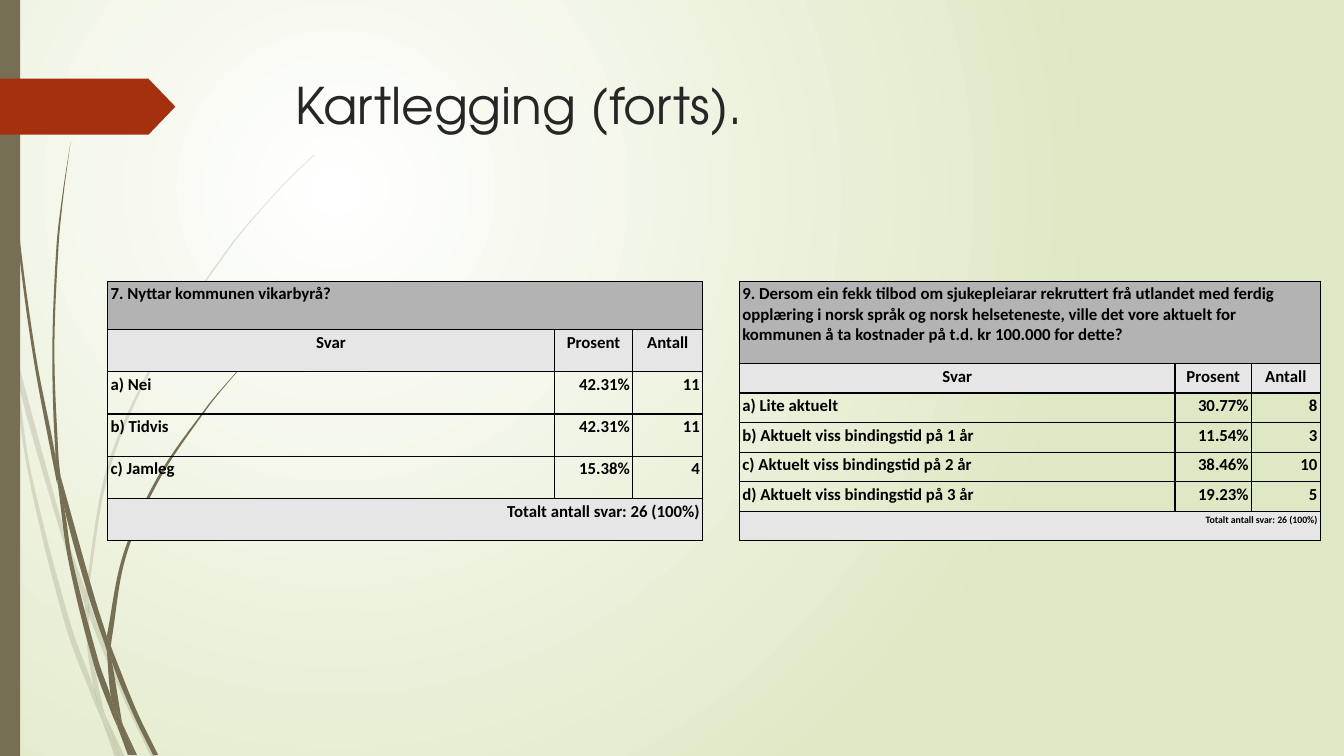
import math
from dataclasses import dataclass

from lxml import etree
from pptx import Presentation
from pptx import util as u
from pptx.dml.color import RGBColor
from pptx.enum import shapes, text
from pptx.oxml import ns

Pt = u.Pt
Point = tuple[float, float]
LEFT, CENTER, RIGHT = text.PP_ALIGN.LEFT, text.PP_ALIGN.CENTER, text.PP_ALIGN.RIGHT


@dataclass(frozen=True)
class Theme:
    olive: str = "766F54"
    rust: str = "A53010"
    glow: str = "FFFFFF"
    meadow: str = "DFE8C4"
    question: str = "B3B3B3"
    band: str = "E6E6E6"
    ink: str = "000000"
    heading: str = "262626"
    heading_font: str = "TeX Gyre Adventor"
    body_font: str = "Calibri"
    heading_size: float = 36
    body_size: float = 12
    small_size: float = 7
    pale_opacity: int = 20


THEME = Theme()


@dataclass(frozen=True)
class Blade:
    left: list[Point]
    right: list[Point]


@dataclass(frozen=True)
class Survey:
    x: float
    question: str
    answers: list[tuple[str, str, str]]
    columns: list[float]
    question_height: float
    row_height: float
    total_size: float = THEME.body_size
    header: tuple[str, str, str] = ("Svar", "Prosent", "Antall")
    total: str = "Totalt antall svar: 26 (100%)"
    y: float = 200.9


PALE_GRASS = [
    Blade([(0, 215.3), (7.2, 247.7), (7.9, 252)], [(0, 203), (6.5, 231.8), (7.9, 252)]),
    Blade([(10.1, 248.4), (12.2, 270.7), (41.8, 375.8), (60.5, 431.3)],
          [(10.1, 248.4), (44.6, 374.4), (61.2, 421.9)]),
    Blade([(63.4, 429.1), (63.4, 439.2), (88.6, 499.7), (108, 540.7)],
          [(63.4, 429.1), (66.2, 437), (91.4, 498.2), (111.6, 540.7)]),
    Blade([(75.6, 511.9), (85.7, 540.7)], [(75.6, 511.9), (89.3, 540.7)]),
    Blade([(7.9, 252), (20.2, 338.4), (46.8, 447.1), (66.2, 499), (72.7, 514.1)],
          [(7.9, 252), (12.2, 270.7), (22.3, 337.7), (50.4, 445.7), (67, 491.8), (71.3, 509), (72.7, 514.1)]),
    Blade([(60.5, 431.3), (62.6, 465.1), (67, 491.8), (69.1, 498.2), (75.6, 511.9)],
          [(60.5, 431.3), (63.4, 437.8), (63.4, 439.2), (65.5, 465.1), (74.2, 508.3), (75.6, 511.9)]),
    Blade([(224.6, 110.2), (208.1, 126), (193, 141.8), (164.2, 175.7), (113.8, 250.6), (77, 331.9),
           (61.2, 420.5), (61.2, 421.9)],
          [(224.6, 110.9), (208.8, 126), (193, 142.6), (164.9, 176.4), (115.2, 251.3), (79.2, 332.6),
           (63.4, 420.5), (63.4, 429.1)]),
    Blade([(72.7, 514.1), (82.1, 540.7)], [(72.7, 514.1), (85.7, 540.7)]),
    Blade([(61.2, 421.9), (60.5, 431.3), (63.4, 437.8)], [(61.2, 421.9), (63.4, 429.1), (63.4, 439.2)]),
    Blade([(67, 491.8), (71.3, 509), (72.7, 514.1), (85.7, 540.7)],
          [(67, 491.8), (69.1, 498.2), (75.6, 511.9), (85.7, 540.7)]),
]
DARK_GRASS = [
    Blade([(2.2, 0), (2.9, 34.6), (5, 79.2), (12.2, 167.8), (23.8, 255.6), (40.3, 343.4), (41, 346.3)],
          [(2.9, 0), (3.6, 34.6), (5.8, 78.5), (13.7, 167), (25.9, 255.6), (39.6, 326.2), (41, 346.3)]),
    Blade([(43.2, 339.8), (46.1, 363.6), (63.4, 426.2), (76.3, 464.4)],
          [(43.2, 339.8), (67, 424.8), (76.3, 454.3)]),
    Blade([(79.2, 461.5), (79.9, 472.3), (95, 509.8), (109.4, 539.3)],
          [(79.2, 461.5), (81.4, 467.3), (97.9, 508.3), (113, 539.3)]),
    Blade([(41, 343.4), (49, 401), (67, 474.5), (79.9, 509.8), (84.2, 519.8)],
          [(41, 343.4), (46.1, 363.6), (51.8, 400.3), (70.6, 473), (79.2, 497.5), (83.5, 516.2), (84.2, 519.8)]),
    Blade([(50.4, 101.5), (44.6, 139), (40.3, 176.4), (37.4, 251.3), (39.6, 323.3), (43.2, 339.8)],
          [(50.4, 101.5), (45.4, 139), (41.8, 176.4), (38.9, 251.3), (41.8, 326.2), (43.2, 339.8)]),
    Blade([(87.8, 517.7), (95.8, 539.3)], [(87.8, 517.7), (97.9, 539.3)]),
    Blade([(39.6, 323.3), (39.6, 326.2), (41, 343.4), (46.1, 363.6)],
          [(39.6, 323.3), (43.2, 339.8), (46.1, 363.6)]),
    Blade([(187.2, 247.7), (176.4, 257.8), (166.3, 268.6), (146.9, 291.6), (112.3, 341.3), (87.8, 396.7),
           (76.3, 454.3)],
          [(187.9, 247.7), (176.4, 258.5), (166.3, 269.3), (147.6, 292.3), (113.8, 342.7), (90, 397.4),
           (79.9, 455.8), (79.2, 461.5)]),
    Blade([(84.2, 519.8), (91.4, 539.3)], [(84.2, 519.8), (94.3, 539.3)]),
    Blade([(76.3, 464.4), (79.2, 497.5), (83.5, 508.3), (87.8, 517.7)],
          [(76.3, 464.4), (78.5, 468.7), (79.9, 472.3), (87.1, 515.5), (87.8, 517.7)]),
    Blade([(76.3, 454.3), (76.3, 464.4), (78.5, 468.7), (79.9, 472.3)],
          [(76.3, 454.3), (79.2, 461.5), (79.9, 472.3)]),
    Blade([(79.2, 497.5), (83.5, 516.2), (84.2, 519.8), (93.6, 539.3)],
          [(79.2, 497.5), (83.5, 508.3), (87.8, 517.7), (95.8, 539.3)]),
]
SURVEYS = [
    Survey(77, "7. Nyttar kommunen vikarbyrå?",
           [("a) Nei", "42.31%", "11"), ("b) Tidvis", "42.31%", "11"), ("c) Jamleg", "15.38%", "4")],
           [319, 56, 50], 34.4, 30.2),
    Survey(528.3, "9. Dersom ein fekk tilbod om sjukepleiarar rekruttert frå utlandet med ferdig opplæring i norsk "
           "språk og norsk helseteneste, ville det vore aktuelt for kommunen å ta kostnader på t.d. kr 100.000 "
           "for dette?",
           [("a) Lite aktuelt", "30.77%", "8"), ("b) Aktuelt viss bindingstid på 1 år", "11.54%", "3"),
            ("c) Aktuelt viss bindingstid på 2 år", "38.46%", "10"),
            ("d) Aktuelt viss bindingstid på 3 år", "19.23%", "5")],
           [311, 54.7, 49], 58.8, 21.1, THEME.small_size),
]


def write(frame, words: str, *, font: str = THEME.body_font, size: float = THEME.body_size,
          color: str = THEME.ink, bold: bool = False, align=LEFT) -> None:
    paragraph = frame.paragraphs[0]
    paragraph.alignment = align
    run = paragraph.add_run()
    run.text = words
    run.font.name, run.font.size, run.font.bold = font, Pt(size), bold
    run.font.color.rgb = RGBColor.from_string(color)


def paint(shape, color: str, opacity: int = 100) -> None:
    shape.shadow.inherit = False
    shape.line.fill.background()
    shape.fill.solid()
    shape.fill.fore_color.rgb = RGBColor.from_string(color)
    if opacity < 100:
        tint = shape.fill._xPr.find(".//" + ns.qn("a:srgbClr"))
        etree.SubElement(tint, ns.qn("a:alpha"), val=str(opacity * 1000))


def handle(knot: Point, before: Point, after: Point, reach: float) -> Point:
    chord = math.dist(before, after) or 1
    return tuple(k + (a - b) / chord * reach for k, b, a in zip(knot, before, after))


def bend(outline, edge_sizes: list[int]) -> None:
    knots = [(int(pt.get("x")), int(pt.get("y"))) for pt in outline.iter(ns.qn("a:pt"))]
    lines = outline.findall(ns.qn("a:lnTo"))
    first = 0
    for size in edge_sizes:
        last = first + size - 1
        for i in range(first, last):
            start, end = knots[i], knots[i + 1]
            reach = math.dist(start, end) / 3
            leave = handle(start, knots[max(i - 1, first)], end, reach)
            arrive = handle(end, start, knots[min(i + 2, last)], -reach)
            curve = etree.Element(ns.qn("a:cubicBezTo"))
            for x, y in (leave, arrive, end):
                etree.SubElement(curve, ns.qn("a:pt"), x=str(round(x)), y=str(round(y)))
            outline.replace(lines[i], curve)
        first = last + 1


def draw_grass(slide, blades: list[Blade], opacity: int = 100) -> None:
    tuft = slide.shapes.add_group_shape()
    for blade in blades:
        knots = [(Pt(x), Pt(y)) for x, y in blade.left + blade.right[::-1]]
        builder = tuft.shapes.build_freeform(*knots[0])
        builder.add_line_segments(knots[1:], close=True)
        shape = builder.convert_to_shape()
        bend(shape._element.find(".//" + ns.qn("a:path")), [len(blade.left), len(blade.right)])
        paint(shape, THEME.olive, opacity)


def draw_background(slide) -> None:
    fill = slide.background.fill
    fill.gradient()
    for stop, color, position in zip(fill.gradient_stops, (THEME.glow, THEME.meadow), (0, 1)):
        stop.color.rgb = RGBColor.from_string(color)
        stop.position = position
    linear = slide.background._cSld.find(".//" + ns.qn("a:lin"))
    circle = etree.Element(ns.qn("a:path"), path="circle")
    etree.SubElement(circle, ns.qn("a:fillToRect"), l="50000", t="50000", r="100000", b="100000")
    linear.getparent().replace(linear, circle)


def style_cell(cell, fill: str | None) -> None:
    cell.margin_left = cell.margin_right = cell.margin_top = cell.margin_bottom = Pt(2)
    if fill:
        cell.fill.solid()
        cell.fill.fore_color.rgb = RGBColor.from_string(fill)
    else:
        cell.fill.background()
    properties = cell._tc.get_or_add_tcPr()
    for index, side in enumerate("LRTB"):
        border = etree.Element(ns.qn(f"a:ln{side}"), w=str(Pt(1)))
        solid = etree.SubElement(border, ns.qn("a:solidFill"))
        etree.SubElement(solid, ns.qn("a:srgbClr"), val=THEME.ink)
        properties.insert(index, border)


def draw_survey(slide, survey: Survey) -> None:
    rows = [(survey.question,), survey.header, *survey.answers, (survey.total,)]
    heights = [survey.question_height] + [survey.row_height] * (len(rows) - 1)
    last = len(rows) - 1
    grid = slide.shapes.add_table(len(rows), len(survey.columns), Pt(survey.x), Pt(survey.y),
                                  Pt(sum(survey.columns)), Pt(sum(heights))).table
    grid.first_row = grid.horz_banding = False
    for column, width in zip(grid.columns, survey.columns):
        column.width = Pt(width)
    fills = {0: THEME.question, 1: THEME.band, last: THEME.band}
    aligns = {0: [LEFT], 1: [CENTER] * 3, last: [RIGHT]}
    for index, (words, height) in enumerate(zip(rows, heights)):
        grid.rows[index].height = Pt(height)
        for cell in grid.rows[index].cells:
            style_cell(cell, fills.get(index))
        if len(words) == 1:
            grid.cell(index, 0).merge(grid.cell(index, len(survey.columns) - 1))
        size = survey.total_size if index == last else THEME.body_size
        for column, (word, align) in enumerate(zip(words, aligns.get(index, [LEFT, RIGHT, RIGHT]))):
            write(grid.cell(index, column).text_frame, word, size=size, bold=True, align=align)


def main() -> None:
    deck = Presentation()
    deck.slide_width, deck.slide_height = Pt(960), Pt(540)
    slide = deck.slides.add_slide(deck.slide_layouts[6])
    draw_background(slide)
    draw_grass(slide, PALE_GRASS, THEME.pale_opacity)
    draw_grass(slide, DARK_GRASS)
    edge = slide.shapes.add_shape(shapes.MSO_SHAPE.RECTANGLE, 0, 0, Pt(14.4), Pt(540))
    paint(edge, THEME.olive)
    pointer = slide.shapes.add_shape(shapes.MSO_SHAPE.PENTAGON, 0, Pt(56.2), Pt(125.3), Pt(40))
    pointer.adjustments[0] = 0.48
    paint(pointer, THEME.rust)
    heading = slide.shapes.add_textbox(Pt(204), Pt(49.3), Pt(702), Pt(100.8)).text_frame
    heading.word_wrap = True
    write(heading, "Kartlegging (forts).", font=THEME.heading_font, size=THEME.heading_size, color=THEME.heading)
    for survey in SURVEYS:
        draw_survey(slide, survey)
    deck.save("out.pptx")


if __name__ == "__main__":
    main()
